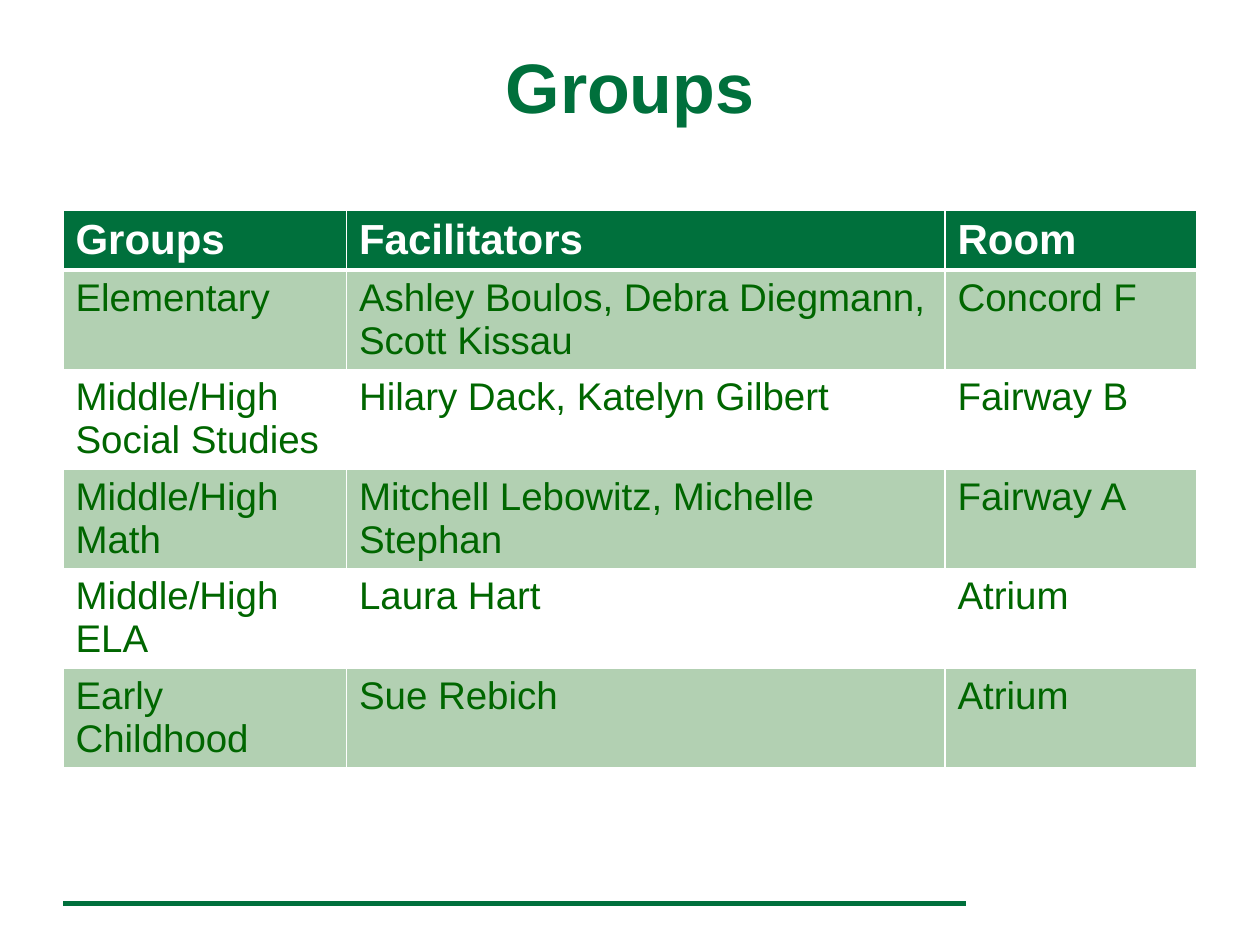
from dataclasses import dataclass

from lxml.etree import SubElement
from pptx import Presentation
from pptx.dml.color import RGBColor
from pptx.enum.shapes import MSO_CONNECTOR
from pptx.enum.text import MSO_ANCHOR, PP_ALIGN
from pptx.oxml.ns import qn
from pptx.util import Inches, Pt

GREEN = "00703C"
DARK_GREEN = "006600"
WHITE = "FFFFFF"


@dataclass(frozen=True)
class CellStyle:
    size: int
    color: str
    bold: bool
    fill: str
    opacity: int = 100
    bottom_border: int = 1


HEADER = CellStyle(24, WHITE, True, GREEN, bottom_border=3)
SHADED = CellStyle(22, DARK_GREEN, False, DARK_GREEN, opacity=30)
PLAIN = CellStyle(22, DARK_GREEN, False, WHITE)

COLUMN_WIDTHS = [2.25, 4.75, 2]
HEADER_HEIGHT = 0.46
BODY_HEIGHT = 0.79
ROWS = [
    ("Groups", "Facilitators", "Room"),
    ("Elementary", "Ashley Boulos, Debra Diegmann, Scott Kissau", "Concord F"),
    ("Middle/High Social Studies", "Hilary Dack, Katelyn Gilbert", "Fairway B"),
    ("Middle/High Math", "Mitchell Lebowitz, Michelle Stephan", "Fairway A"),
    ("Middle/High ELA", "Laura Hart", "Atrium"),
    ("Early Childhood", "Sue Rebich", "Atrium"),
]


def rgb(value: str) -> RGBColor:
    return RGBColor.from_string(value)


def add_span(para, text: str, size: int, color: str, bold: bool) -> None:
    span = para.add_run()
    span.text = text
    span.font.name = "Arial"
    span.font.size = Pt(size)
    span.font.bold = bold
    span.font.color.rgb = rgb(color)


def set_borders(cell, bottom_width: int) -> None:
    properties = cell._tc.get_or_add_tcPr()
    widths = {"a:lnL": 1, "a:lnR": 1, "a:lnT": 1, "a:lnB": bottom_width}
    for position, (tag, width) in enumerate(widths.items()):
        border = SubElement(properties, qn(tag), w=str(Pt(width)))
        fill = SubElement(border, qn("a:solidFill"))
        SubElement(fill, qn("a:srgbClr"), val=WHITE)
        properties.insert(position, border)


def fill_cell(cell, text: str, style: CellStyle) -> None:
    add_span(cell.text_frame.paragraphs[0], text, style.size, style.color, style.bold)
    cell.fill.solid()
    cell.fill.fore_color.rgb = rgb(style.fill)
    if style.opacity < 100:
        color = cell._tc.tcPr.find(".//" + qn("a:srgbClr"))
        SubElement(color, qn("a:alpha"), val=str(style.opacity * 1000))
    set_borders(cell, style.bottom_border)


def add_group_table(page) -> None:
    height = HEADER_HEIGHT + BODY_HEIGHT * (len(ROWS) - 1)
    table = page.shapes.add_table(
        len(ROWS), len(COLUMN_WIDTHS),
        Inches(0.5), Inches(1.67), Inches(sum(COLUMN_WIDTHS)), Inches(height),
    ).table
    for column, width in zip(table.columns, COLUMN_WIDTHS):
        column.width = Inches(width)
    for index, texts in enumerate(ROWS):
        table.rows[index].height = Inches(BODY_HEIGHT if index else HEADER_HEIGHT)
        style = HEADER if index == 0 else SHADED if index % 2 else PLAIN
        for column_index, text in enumerate(texts):
            fill_cell(table.cell(index, column_index), text, style)


def add_title(page) -> None:
    box = page.shapes.add_textbox(Inches(0), Inches(0.3), Inches(10), Inches(1.25))
    box.text_frame.word_wrap = True
    box.text_frame.vertical_anchor = MSO_ANCHOR.TOP
    para = box.text_frame.paragraphs[0]
    para.alignment = PP_ALIGN.CENTER
    add_span(para, "Groups", 40, GREEN, True)


def add_footer_rule(page) -> None:
    rule = page.shapes.add_connector(
        MSO_CONNECTOR.STRAIGHT, Inches(0.5), Inches(7.17), Inches(7.67), Inches(7.17)
    )
    rule.line.color.rgb = rgb(GREEN)
    rule.line.width = Pt(2.5)
    SubElement(rule._element.spPr, qn("a:effectLst"))


def main() -> None:
    deck = Presentation()
    deck.slide_width = Inches(10)
    deck.slide_height = Inches(7.5)
    page = deck.slides.add_slide(deck.slide_layouts[6])

    # Footer rule, table and title, from back to front
    add_footer_rule(page)
    add_group_table(page)
    add_title(page)

    deck.save("out.pptx")


if __name__ == "__main__":
    main()
